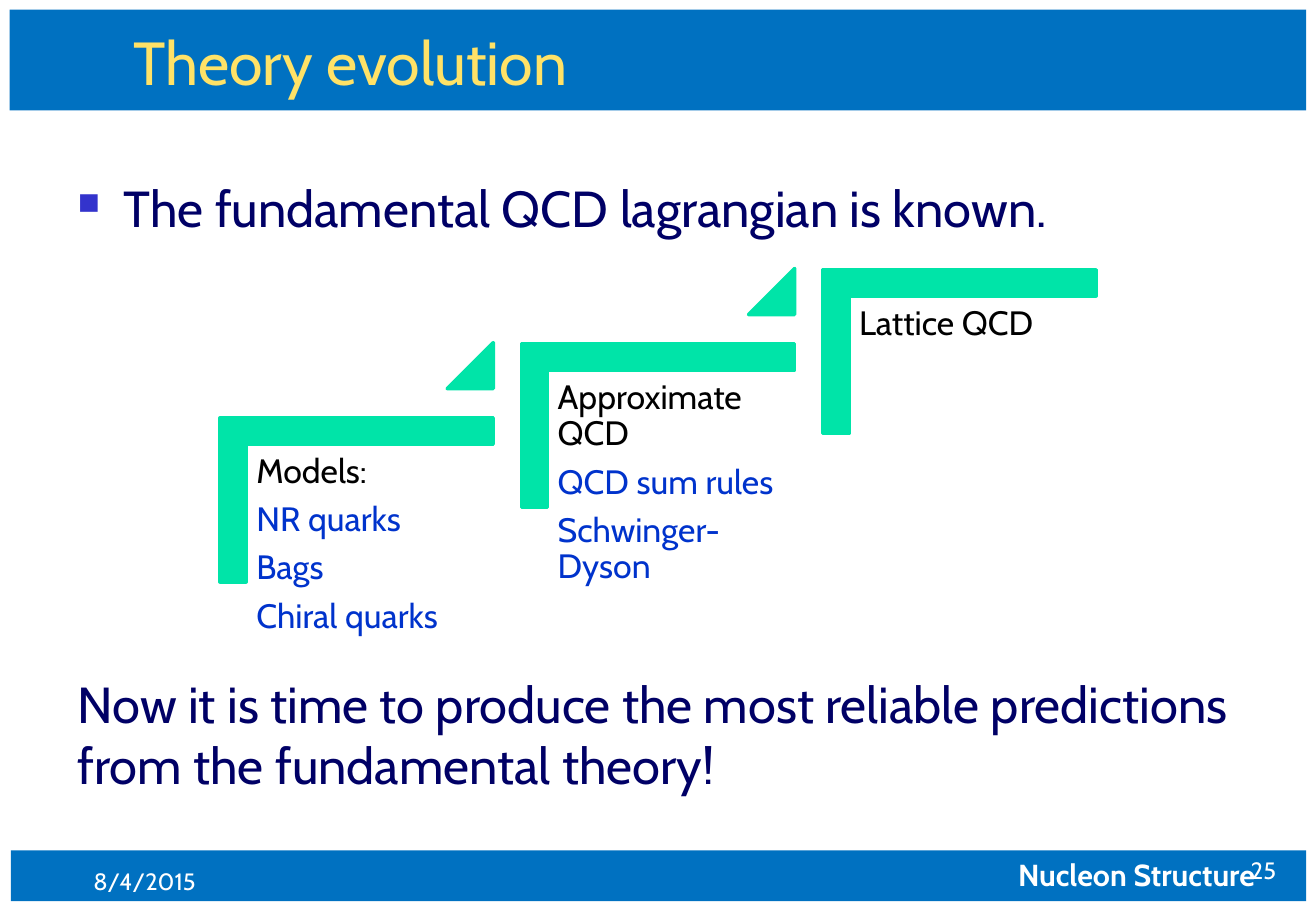
import pptx
import pptx.util
import pptx.dml.color
import pptx.enum.shapes
import pptx.enum.text
import lxml.etree
from pptx.util import Inches

RGBColor = pptx.dml.color.RGBColor
MSO_SHAPE = pptx.enum.shapes.MSO_SHAPE
ANCHOR = pptx.enum.text.MSO_ANCHOR
ALIGN = pptx.enum.text.PP_ALIGN

FONT = "Cabin"
BAND_BLUE = RGBColor(0x00, 0x71, 0xC1)
TITLE_YELLOW = RGBColor(0xFF, 0xE2, 0x67)
NAVY = RGBColor(0x00, 0x00, 0x66)
ITEM_BLUE = RGBColor(0x00, 0x33, 0xCC)
STEP_GREEN = RGBColor(0x00, 0xE4, 0xA8)
BLACK = RGBColor(0, 0, 0)
WHITE = RGBColor(0xFF, 0xFF, 0xFF)
BULLET_BLUE = "3333CC"

STEPS = [
    ["Models:", "NR quarks", "Bags", "Chiral quarks"],
    ["Approximate QCD", "QCD sum rules", "Schwinger-Dyson"],
    ["Lattice QCD"],
]
STEP_LEFT, STEP_TOP = 2.26, 2.99
STEP_RIGHT, STEP_UP = 2.48, 0.61


def add_filled(slide, kind, left, top, width, height, color):
    sp = slide.shapes.add_shape(
        kind, Inches(left), Inches(top), Inches(width), Inches(height))
    sp.shadow.inherit = False
    sp.fill.solid()
    sp.fill.fore_color.rgb = color
    sp.line.fill.background()
    return sp


def add_green(slide, kind, left, top, width, height, adjustments):
    sp = add_filled(slide, kind, left, top, width, height, STEP_GREEN)
    sp.line.color.rgb = STEP_GREEN
    sp.line.width = pptx.util.Pt(2)
    for i, value in enumerate(adjustments):
        sp.adjustments[i] = value
    return sp


def add_text(slide, lines, left, top, width, height, size, color,
             anchor=ANCHOR.TOP, align=ALIGN.LEFT, bold=False):
    """Add a wrapped text box with one paragraph per line; return its frame."""
    sp = slide.shapes.add_textbox(
        Inches(left), Inches(top), Inches(width), Inches(height))
    tf = sp.text_frame
    tf.word_wrap = True
    tf.vertical_anchor = anchor
    tf.text = "\n".join(lines)
    for p in tf.paragraphs:
        p.alignment = align
        p.font.name = FONT
        p.font.size = pptx.util.Pt(size)
        p.font.bold = bold
        p.font.color.rgb = color
    return tf


def add_bullet(p):
    """Give the paragraph a small square bullet with a hanging indent."""
    ppr = p._p.get_or_add_pPr()
    ppr.set("marL", str(Inches(0.38)))
    ppr.set("indent", str(-Inches(0.38)))
    ns = "{http://schemas.openxmlformats.org/drawingml/2006/main}"
    color = lxml.etree.Element(ns + "buClr")
    lxml.etree.SubElement(color, ns + "srgbClr", val=BULLET_BLUE)
    size = lxml.etree.Element(ns + "buSzPct", val="60000")
    char = lxml.etree.Element(ns + "buChar", char="■")
    for i, mark in enumerate([color, size, char]):
        ppr.insert(i, mark)


def add_step(slide, index, lines):
    """Add one stair: corner, text, and a triangle leading to the next."""
    left = STEP_LEFT + index * STEP_RIGHT
    top = STEP_TOP - index * STEP_UP
    corner = add_green(slide, MSO_SHAPE.CORNER, left, top, 1.35, 2.25,
                       [0.16, 0.16])
    corner.rotation = 90

    tf = add_text(slide, lines, left - 0.23, top + 0.67, 2.03, 1.78,
                  20, ITEM_BLUE)
    tf.margin_left = tf.margin_right = Inches(0.08)
    tf.margin_top = tf.margin_bottom = Inches(0.08)
    tf.paragraphs[0].font.color.rgb = BLACK
    for p in tf.paragraphs:
        p.line_spacing = 0.9
        p.space_after = pptx.util.Pt(7)

    if index < len(STEPS) - 1:
        add_green(slide, MSO_SHAPE.ISOSCELES_TRIANGLE,
                  left + 1.42, top - 0.17, 0.38, 0.38, [1])


def main():
    prs = pptx.Presentation()
    prs.slide_width = Inches(10.83)
    prs.slide_height = Inches(7.5)
    slide = prs.slides.add_slide(prs.slide_layouts[6])

    add_filled(slide, MSO_SHAPE.RECTANGLE, 0.08, 0.08, 10.67, 0.83, BAND_BLUE)
    add_filled(slide, MSO_SHAPE.RECTANGLE, 0.09, 7, 10.66, 0.42, BAND_BLUE)
    add_text(slide, ["Nucleon Structure"], 8.28, 7, 2.5, 0.4, 18, WHITE,
             bold=True)
    add_text(slide, ["Theory evolution"], 1, 0.08, 9.23, 0.77, 36,
             TITLE_YELLOW, ANCHOR.BOTTOM)

    tf = add_text(slide, ["The fundamental QCD lagrangian is known."],
                  0.54, 1.41, 10.07, 0.6, 30, NAVY)
    add_bullet(tf.paragraphs[0])
    add_text(slide, ["Now it is time to produce the most reliable predictions "
                     "from the fundamental theory!"],
             0.54, 5.49, 10.07, 1.1, 30, NAVY)

    add_text(slide, ["8/4/2015"], 0.67, 6.92, 2.26, 0.5, 14, WHITE,
             ANCHOR.BOTTOM)
    add_text(slide, ["25"], 8.34, 6.83, 2.26, 0.5, 14, WHITE,
             ANCHOR.BOTTOM, ALIGN.RIGHT)

    for index, lines in enumerate(STEPS):
        add_step(slide, index, lines)

    prs.save("out.pptx")


if __name__ == "__main__":
    main()
